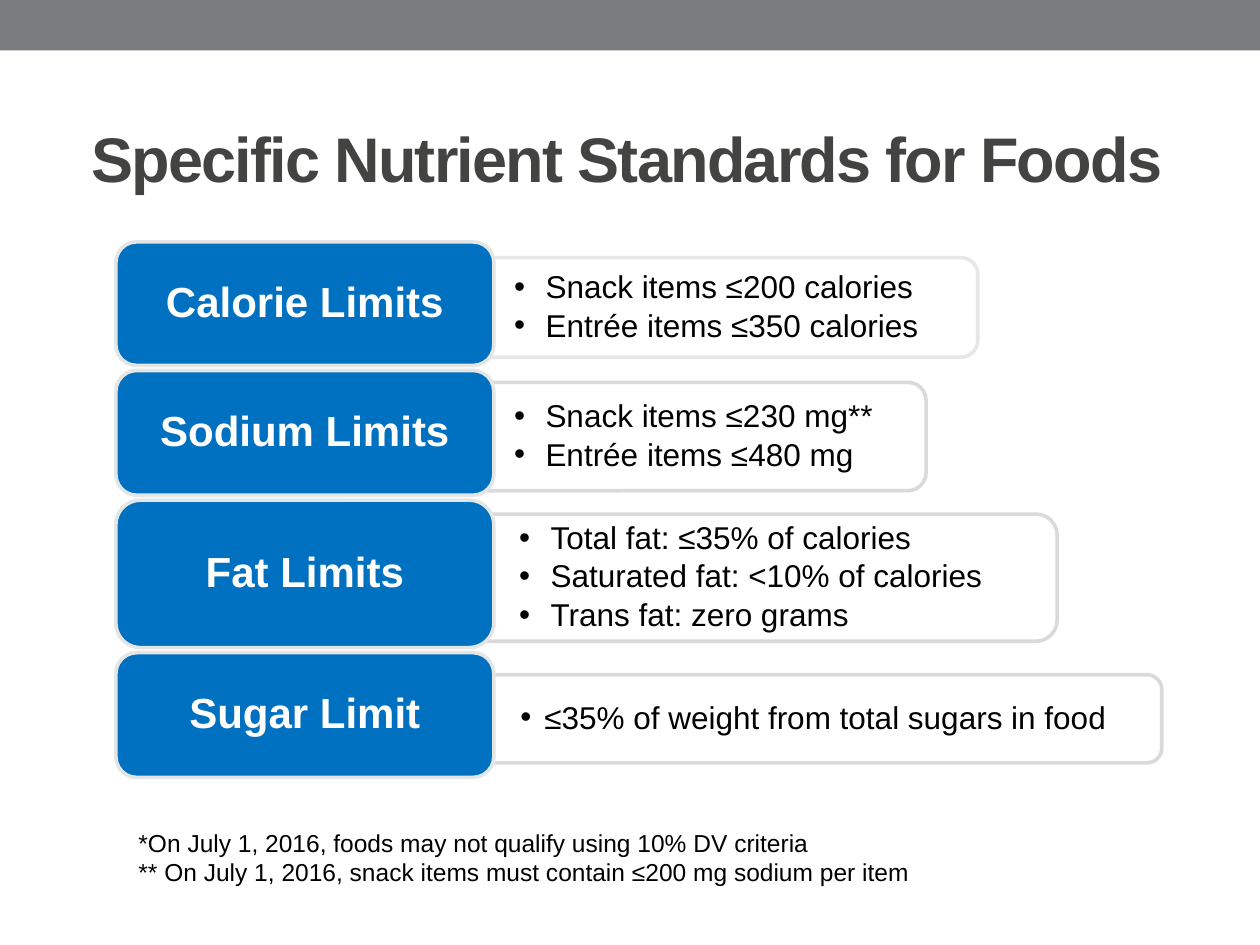
from dataclasses import dataclass

from lxml.etree import SubElement
from pptx import Presentation
from pptx.dml.color import RGBColor
from pptx.enum.shapes import MSO_SHAPE
from pptx.enum.text import MSO_ANCHOR, MSO_AUTO_SIZE, PP_ALIGN
from pptx.oxml.ns import qn
from pptx.util import Emu, Inches, Pt


@dataclass(frozen=True)
class Theme:
    font: str = "Arial"
    bar: str = "797B7E"
    title: str = "434342"
    label: str = "0070C0"
    label_text: str = "FFFFFF"
    panel: str = "FFFFFF"
    text: str = "000000"
    light_edge: str = "E4E5E5"
    dark_edge: str = "D7D7D8"
    title_size: int = 36
    label_size: int = 24
    item_size: int = 18
    note_size: int = 14
    edge_width: float = 2.08
    panel_opacity: int = 90


@dataclass(frozen=True)
class Box:
    """A rectangle in grid columns and rows."""
    left: float
    top: float
    width: float
    height: float


@dataclass(frozen=True)
class Standard:
    """A nutrient limit: label, rules and the grid measures of its row."""
    label: str
    items: tuple[str, ...]
    label_height: float
    panel_left: float
    panel_width: float
    panel_height: float
    edge: str = Theme.dark_edge
    indent: float = 2.5


THEME = Theme()
SLIDE_WIDTH, SLIDE_HEIGHT = Inches(10), Inches(7.5)
COLUMN, ROW = SLIDE_WIDTH / 100, SLIDE_HEIGHT / 75

LABEL_LEFT, LABEL_WIDTH = 9.2, 30
FIRST_TOP, LABEL_GAP, PANEL_DROP = 19.2, 0.4, 0.3
PANEL_INSET = 2.7

STANDARDS = (
    Standard("Calorie Limits",
             ("Snack items ≤200 calories", "Entrée items ≤350 calories"),
             9.8, 38.1, 39.5, 7.9, edge=THEME.light_edge),
    Standard("Sodium Limits",
             ("Snack items ≤230 mg**", "Entrée items ≤480 mg"),
             9.9, 38.1, 35.4, 8.6),
    Standard("Fat Limits",
             ("Total fat: ≤35% of calories", "Saturated fat: <10% of calories",
              "Trans fat: zero grams"),
             11.7, 38.5, 45.4, 10.1),
    Standard("Sugar Limit", ("≤35% of weight from total sugars in food",),
             9.9, 38.6, 53.6, 7, indent=1.9),
)
NOTES = (
    "*On July 1, 2016, foods may not qualify using 10% DV criteria",
    "** On July 1, 2016, snack items must contain ≤200 mg sodium per item",
)


def apply_format(target, values: dict) -> None:
    for name, value in values.items():
        setattr(target, name, value)


def place(shape, box: Box) -> None:
    apply_format(shape, {
        "left": Emu(round(box.left * COLUMN)), "top": Emu(round(box.top * ROW)),
        "width": Emu(round(box.width * COLUMN)),
        "height": Emu(round(box.height * ROW))})


def add_panel(slide, kind: MSO_SHAPE, box: Box, fill: str, edge: str | None = None):
    shape = slide.shapes.add_shape(kind, 0, 0, 0, 0)
    place(shape, box)
    shape.shadow.inherit = False
    shape.fill.solid()
    shape.fill.fore_color.rgb = RGBColor.from_string(fill)
    if edge:
        shape.line.color.rgb = RGBColor.from_string(edge)
        shape.line.width = Pt(THEME.edge_width)
    else:
        shape.line.fill.background()
    return shape


def write(shape, lines: tuple[str, ...], size: int, color: str, bold: bool = False,
          anchor=MSO_ANCHOR.MIDDLE, inset: float = 1, **paragraph_format) -> None:
    frame = shape.text_frame
    frame.text = "\n".join(lines)
    margin = Emu(round(inset * COLUMN))
    apply_format(frame, {
        "word_wrap": True, "auto_size": MSO_AUTO_SIZE.NONE,
        "vertical_anchor": anchor, "margin_left": margin, "margin_right": margin})
    for paragraph in frame.paragraphs:
        apply_format(paragraph, paragraph_format)
        font = paragraph.runs[0].font
        apply_format(font, {"name": THEME.font, "size": Pt(size), "bold": bold})
        font.color.rgb = RGBColor.from_string(color)


def add_bullets(shape, indent: float) -> None:
    offset = round(indent * COLUMN)
    for paragraph in shape.text_frame.paragraphs:
        properties = paragraph._p.get_or_add_pPr()
        properties.set("marL", str(offset))
        properties.set("indent", str(-offset))
        SubElement(properties, qn("a:buFont"), typeface=THEME.font)
        SubElement(properties, qn("a:buChar"), char="•")


def set_opacity(shape, percent: int) -> None:
    """Make both the fill and the outline of a shape translucent."""
    for color in shape._element.spPr.iter(qn("a:srgbClr")):
        SubElement(color, qn("a:alpha"), val=str(percent * 1000))


def add_standard(slide, standard: Standard, top: float) -> None:
    middle = top + standard.label_height / 2 + PANEL_DROP
    width, height = standard.panel_width, standard.panel_height
    center = standard.panel_left + width / 2

    # Turned a quarter so that the two round corners face right.
    panel = add_panel(slide, MSO_SHAPE.ROUND_2_SAME_RECTANGLE,
                      Box(center - height / 2, middle - width / 2, height, width),
                      THEME.panel, standard.edge)
    panel.rotation = 90
    set_opacity(panel, THEME.panel_opacity)

    rules = slide.shapes.add_textbox(0, 0, 0, 0)
    place(rules, Box(standard.panel_left, middle - height / 2, width, height))
    write(rules, standard.items, THEME.item_size, THEME.text, inset=PANEL_INSET,
          line_spacing=0.9, space_after=Pt(2.7))
    add_bullets(rules, standard.indent)

    label = add_panel(slide, MSO_SHAPE.ROUNDED_RECTANGLE,
                      Box(LABEL_LEFT, top, LABEL_WIDTH, standard.label_height),
                      THEME.label, THEME.light_edge)
    write(label, (standard.label,), THEME.label_size, THEME.label_text, bold=True,
          alignment=PP_ALIGN.CENTER, line_spacing=0.9)


def add_title(slide) -> None:
    title = slide.shapes.title
    place(title, Box(5, 5.8, 89.5, 13.3))
    write(title, ("Specific Nutrient Standards for Foods",), THEME.title_size,
          THEME.title, bold=True, alignment=PP_ALIGN.CENTER)
    run = title.text_frame.paragraphs[0].runs[0]
    run._r.get_or_add_rPr().set("spc", "-100")


def main() -> None:
    presentation = Presentation()
    apply_format(presentation,
                 {"slide_width": SLIDE_WIDTH, "slide_height": SLIDE_HEIGHT})
    slide = presentation.slides.add_slide(
        presentation.slide_layouts.get_by_name("Title Only"))

    add_panel(slide, MSO_SHAPE.RECTANGLE, Box(0, 0, 100, 4), THEME.bar)
    add_title(slide)

    top = FIRST_TOP
    for standard in STANDARDS:
        add_standard(slide, standard, top)
        top += standard.label_height + LABEL_GAP

    notes = slide.shapes.add_textbox(0, 0, 0, 0)
    place(notes, Box(10, 65.2, 64.8, 5.7))
    write(notes, NOTES, THEME.note_size, THEME.text, anchor=MSO_ANCHOR.TOP)

    presentation.save("out.pptx")


if __name__ == "__main__":
    main()
